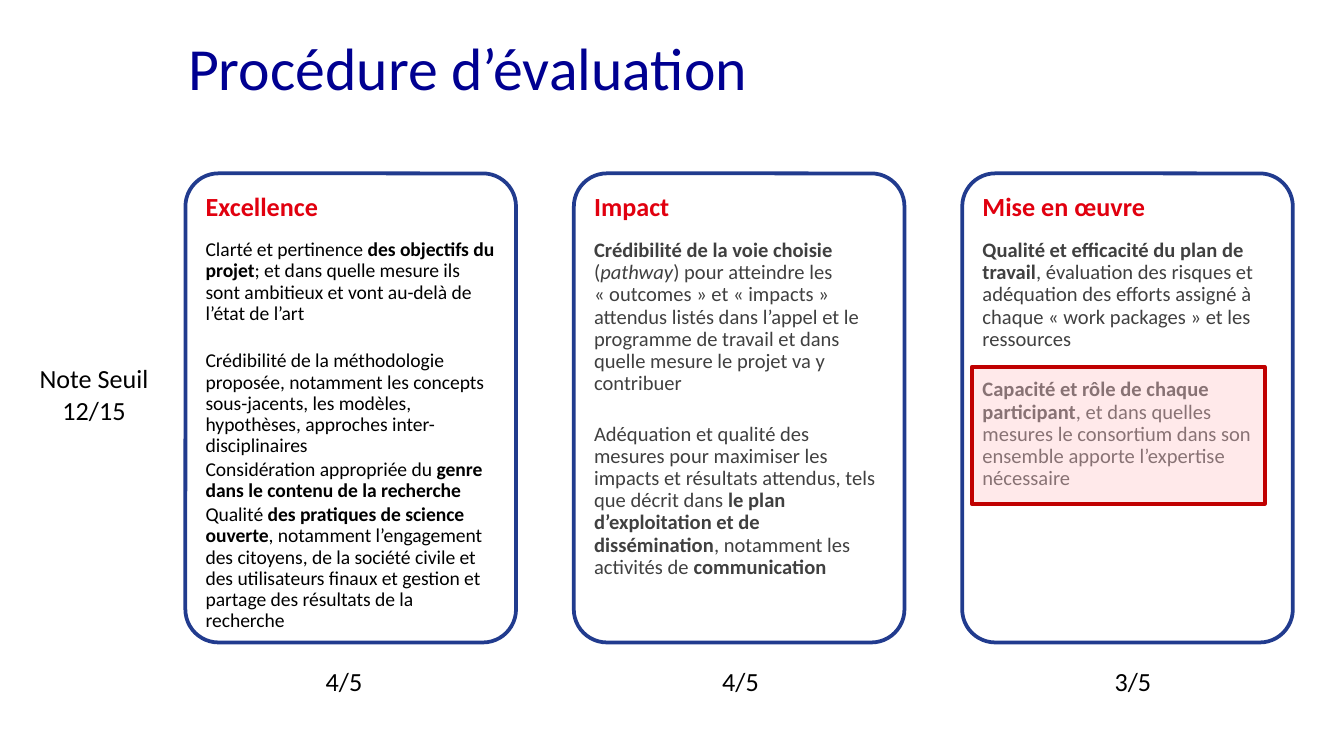
"""Build the slide on the evaluation procedure and its three criteria."""
from dataclasses import dataclass

from lxml.etree import SubElement
from pptx import Presentation
from pptx.dml.color import RGBColor as Rgb
from pptx.enum.shapes import MSO_SHAPE as Kind
from pptx.enum.text import MSO_ANCHOR as Anchor, PP_ALIGN as Align
from pptx.oxml.ns import qn
from pptx.util import Inches, Pt

FONT = "Calibri"
HUES = {
    "title": "000091", "head": "E1000F", "edge": "213B8E", "card": "FFFFFF",
    "black": "000000", "grey": "404040", "pink": "FFC6CA", "red": "C00000",
}
LEFT, STEP, TOP = 1.38, 2.89, 1.29
WIDE, HIGH, PAD = 2.46, 3.49, 0.07
HARD = chr(160)


@dataclass
class Run:
    text: str
    bold: bool = False
    slant: bool = False


@dataclass
class Para:
    runs: list[Run]
    after: float = 1.5


@dataclass
class Card:
    head: str
    size: float
    hue: str
    paras: list[Para]


@dataclass
class Note:
    text: str
    left: float
    top: float
    wide: float
    high: float


def quote(text: str) -> str:
    return f"«{HARD}{text}{HARD}»"


CARDS = [
    Card("Excellence", 10.5, "black", [
        Para([Run("Clarté et pertinence "), Run("des objectifs du projet", True),
              Run("; et dans quelle mesure ils sont ambitieux et vont au-delà "
                  "de l’état de l’art")], 14.2),
        Para([Run("Crédibilité de la méthodologie proposée, notamment les concepts "
                  "sous-jacents, les modèles, hypothèses, approches "
                  "inter-disciplinaires")]),
        Para([Run("Considération appropriée du "),
              Run("genre dans le contenu de la recherche", True)]),
        Para([Run("Qualité "), Run("des pratiques de science ouverte", True),
              Run(", notamment l’engagement des citoyens, de la société civile et "
                  "des utilisateurs finaux et gestion et partage des résultats "
                  "de la recherche")]),
    ]),
    Card("Impact", 11, "grey", [
        Para([Run("Crédibilité de la voie choisie ", True), Run("("),
              Run("pathway", slant=True),
              Run(f") pour atteindre les {quote('outcomes')} et {quote('impacts')} "
                  "attendus listés dans l’appel et le programme de travail et dans "
                  "quelle mesure le projet va y contribuer")], 15.2),
        Para([Run("Adéquation et qualité des mesures pour maximiser les impacts et "
                  "résultats attendus, tels que décrit dans "),
              Run("le plan d’exploitation et de dissémination", True),
              Run(", notamment les activités de "), Run("communication", True)]),
    ]),
    Card("Mise en œuvre", 11, "grey", [
        Para([Run("Qualité et efficacité du plan de travail", True),
              Run(", évaluation des risques et adéquation des efforts assigné à "
                  f"chaque {quote('work packages')} et les ressources")], 15.2),
        Para([Run("Capacité et rôle de chaque participant", True),
              Run(", et dans quelles mesures le consortium dans son ensemble "
                  "apporte l’expertise nécessaire")]),
    ]),
]
NOTES = [
    Note("Note Seuil 12/15", 0.17, 2.65, 1.06, 0.57),
    Note("4/5", 1.89, 4.9, 1.34, 0.34),
    Note("4/5", 4.84, 4.9, 1.34, 0.34),
    Note("3/5", 7.76, 4.9, 1.34, 0.34),
]


def style(font, size: float, hue: str, bold: bool = False, slant: bool = False) -> None:
    font.name, font.size = FONT, Pt(size)
    font.bold, font.italic = bold, slant
    font.color.rgb = Rgb.from_string(HUES[hue])


def add_box(slide, kind, area: tuple, fill: str, line: str, alpha: int):
    box = slide.shapes.add_shape(kind, *map(Inches, area))
    box.shadow.inherit = False
    box.fill.solid()
    box.fill.fore_color.rgb = Rgb.from_string(HUES[fill])
    tint = box.fill._xPr.find(qn("a:solidFill"))[0]
    SubElement(tint, qn("a:alpha")).set("val", str(alpha * 1000))
    box.line.color.rgb = Rgb.from_string(HUES[line])
    box.line.width = Pt(2)
    return box


def add_card(slide, card: Card, left: float) -> None:
    area = (left, TOP, WIDE, HIGH)
    box = add_box(slide, Kind.ROUNDED_RECTANGLE, area, "card", "edge", 90)
    box.adjustments[0] = 0.1
    area = (left + PAD, TOP + PAD, WIDE - 2 * PAD, HIGH - 2 * PAD)
    frame = slide.shapes.add_textbox(*map(Inches, area)).text_frame
    frame.word_wrap = True
    frame.margin_left = frame.margin_right = Inches(0.08)
    frame.margin_top = frame.margin_bottom = Inches(0.08)
    frame.text = card.head
    head = frame.paragraphs[0]
    head.line_spacing, head.space_after = 0.9, Pt(9.7)
    style(head.runs[0].font, 14, "head", True)
    for para in card.paras:
        line = frame.add_paragraph()
        line.line_spacing, line.space_after = 0.9, Pt(para.after)
        for run in para.runs:
            part = line.add_run()
            part.text = run.text
            style(part.font, card.size, card.hue, run.bold, run.slant)


def add_note(slide, note: Note) -> None:
    area = (note.left, note.top, note.wide, note.high)
    frame = slide.shapes.add_textbox(*map(Inches, area)).text_frame
    frame.word_wrap = True
    frame.text = note.text
    line = frame.paragraphs[0]
    line.alignment = Align.CENTER
    style(line.runs[0].font, 14, "black")


def add_title(slide, text: str) -> None:
    title = slide.shapes.title
    title.left, title.top = Inches(1.3), Inches(0.1)
    title.width, title.height = Inches(8.58), Inches(0.79)
    frame = title.text_frame
    frame.text = text
    frame.vertical_anchor = Anchor.MIDDLE
    line = frame.paragraphs[0]
    line.alignment = Align.LEFT
    style(line.runs[0].font, 32, "title")


def main() -> None:
    deck = Presentation()
    deck.slide_width = Inches(10)
    deck.slide_height = deck.slide_width * 9 // 16
    slide = deck.slides.add_slide(deck.slide_layouts[5])
    add_title(slide, "Procédure d’évaluation")
    for i, card in enumerate(CARDS):
        add_card(slide, card, LEFT + i * STEP)
    for note in NOTES:
        add_note(slide, note)
    add_box(slide, Kind.RECTANGLE, (7.23, 2.73, 2.18, 1.02), "pink", "red", 38)
    deck.save("out.pptx")


if __name__ == "__main__":
    main()
